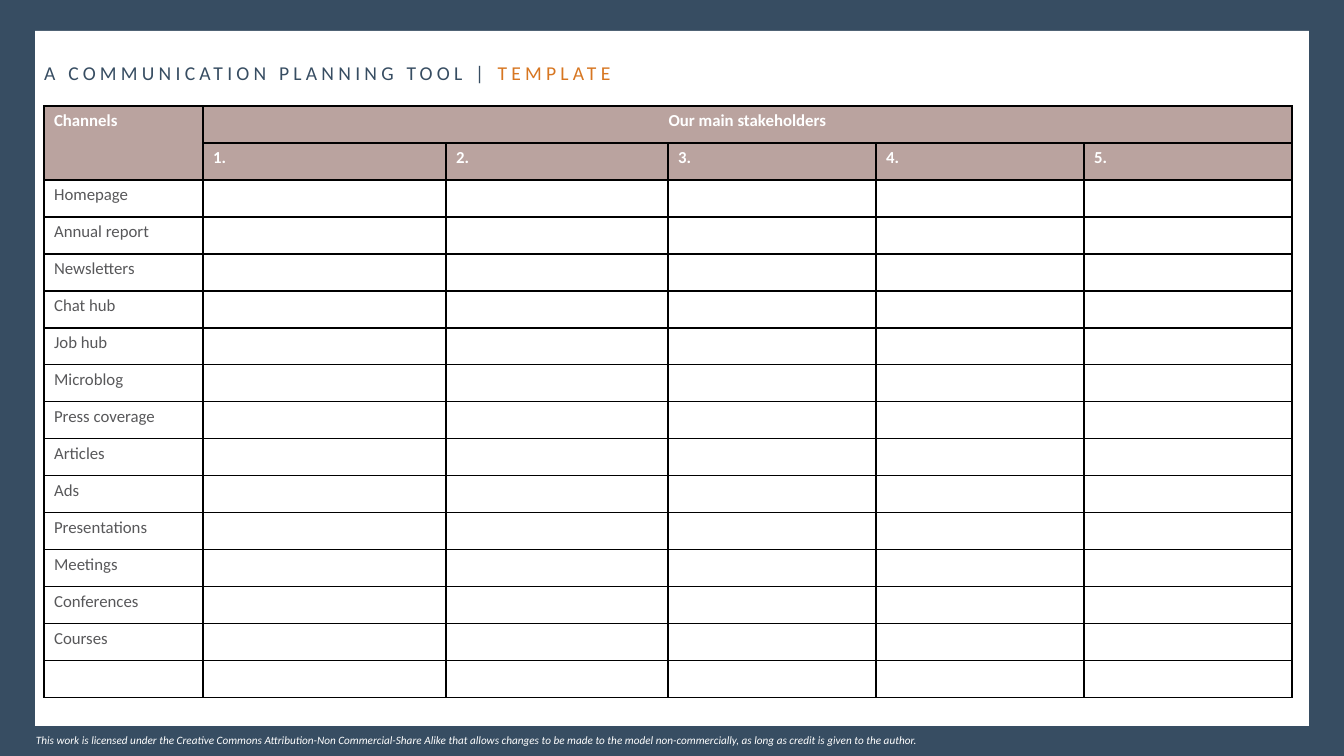
"""Builds the communication planning template slide: channels against stakeholders."""
from lxml import etree
from pptx import Presentation
from pptx.dml.color import RGBColor
from pptx.enum.shapes import MSO_SHAPE
from pptx.enum.text import MSO_ANCHOR, MSO_AUTO_SIZE, PP_ALIGN
from pptx.oxml.ns import qn
from pptx.util import Emu, Pt

RECTANGLE = MSO_SHAPE.RECTANGLE
MIDDLE = MSO_ANCHOR.MIDDLE
NO_AUTOFIT = MSO_AUTO_SIZE.NONE
LEFT, CENTER = PP_ALIGN.LEFT, PP_ALIGN.CENTER

NAVY = RGBColor(0x37, 0x4D, 0x62)
ORANGE = RGBColor(0xD7, 0x76, 0x21)
ROSE = RGBColor(0xBA, 0xA3, 0x9F)
GREY = RGBColor(0x58, 0x58, 0x5A)
WHITE = RGBColor(0xFF, 0xFF, 0xFF)
BLACK = RGBColor(0x00, 0x00, 0x00)

FONT = "Calibri"
SLIDE_WIDTH, SLIDE_HEIGHT = 1344, 756
EMU_PER_PX = 12192000 / SLIDE_WIDTH
ROW_HEIGHT = 37
COLUMN_WIDTHS = [159, 243, 222, 208, 208, 208]
STAKEHOLDERS = ["1.", "2.", "3.", "4.", "5."]
CHANNELS = ["Homepage", "Annual report", "Newsletters", "Chat hub", "Job hub",
            "Microblog", "Press coverage", "Articles", "Ads", "Presentations",
            "Meetings", "Conferences", "Courses", ""]


def px(*lengths):
    """Turns pixel lengths into EMU."""
    return [Emu(round(length * EMU_PER_PX)) for length in lengths]


def style(run, size, color, bold=False, italic=False):
    """Sets the font of a run."""
    run.font.name = FONT
    run.font.size = Pt(size)
    run.font.color.rgb = color
    run.font.bold = bold
    run.font.italic = italic


deck = Presentation()
deck.slide_width, deck.slide_height = px(SLIDE_WIDTH, SLIDE_HEIGHT)
slide = deck.slides.add_slide(deck.slide_layouts[5])
slide.background.fill.solid()
slide.background.fill.fore_color.rgb = NAVY

panel = slide.shapes.add_shape(RECTANGLE, *px(35, 31, 1274, 695))
panel.shadow.inherit = False
panel.fill.solid()
panel.fill.fore_color.rgb = WHITE
panel.line.fill.background()

license_note = slide.shapes.add_textbox(*px(26, 728, 1139, 24)).text_frame
license_note.word_wrap = True
license_note.vertical_anchor = MIDDLE
license_note.text = (
    "This work is licensed under the Creative Commons Attribution-Non Commercial-Share Alike "
    "that allows changes to be made to the model non-commercially, as long as credit is given "
    "to the author.")
style(license_note.paragraphs[0].runs[0], 8, WHITE, italic=True)

rows = [["Channels", "Our main stakeholders", "", "", "", ""], ["", *STAKEHOLDERS]]
rows += [[channel] + [""] * len(STAKEHOLDERS) for channel in CHANNELS]
planner = slide.shapes.add_table(
    len(rows), len(COLUMN_WIDTHS),
    *px(44, 106, sum(COLUMN_WIDTHS), ROW_HEIGHT * len(rows))).table
planner.first_row = False
planner.horz_banding = False
for column, width in zip(planner.columns, px(*COLUMN_WIDTHS)):
    column.width = width
for row in planner.rows:
    row.height = px(ROW_HEIGHT)[0]

for row_number, texts in enumerate(rows):
    is_header = row_number < 2
    for column_number, text in enumerate(texts):
        cell = planner.cell(row_number, column_number)
        properties = cell._tc.get_or_add_tcPr()
        for side in ("a:lnL", "a:lnR", "a:lnT", "a:lnB"):
            border = etree.SubElement(properties, qn(side), w=str(Pt(1)))
            border_fill = etree.SubElement(border, qn("a:solidFill"))
            etree.SubElement(border_fill, qn("a:srgbClr"), val=str(BLACK))
        cell.fill.solid()
        cell.fill.fore_color.rgb = ROSE if is_header else WHITE
        paragraph = cell.text_frame.paragraphs[0]
        if text:
            paragraph.text = text
            style(paragraph.runs[0], 12, WHITE if is_header else GREY, bold=is_header)
        else:
            etree.SubElement(paragraph._p, qn("a:endParaRPr"), sz="1200")

planner.cell(0, 0).merge(planner.cell(1, 0))
planner.cell(0, 1).merge(planner.cell(0, len(STAKEHOLDERS)))
planner.cell(0, 1).text_frame.paragraphs[0].alignment = CENTER

title = slide.shapes.title
title.left, title.top, title.width, title.height = px(34, 56, 758, 34)
slide.shapes._spTree.append(title._element)
heading = title.text_frame
heading.word_wrap = True
heading.auto_size = NO_AUTOFIT
heading.vertical_anchor = MIDDLE
heading_line = heading.paragraphs[0]
heading_line.alignment = LEFT
for words, color in (("A COMMUNICATION PLANNING TOOL | ", NAVY), ("TEMPLATE", ORANGE)):
    run = heading_line.add_run()
    run.text = words
    style(run, 14, color)
    run.font._element.set("spc", "300")

deck.save("out.pptx")
